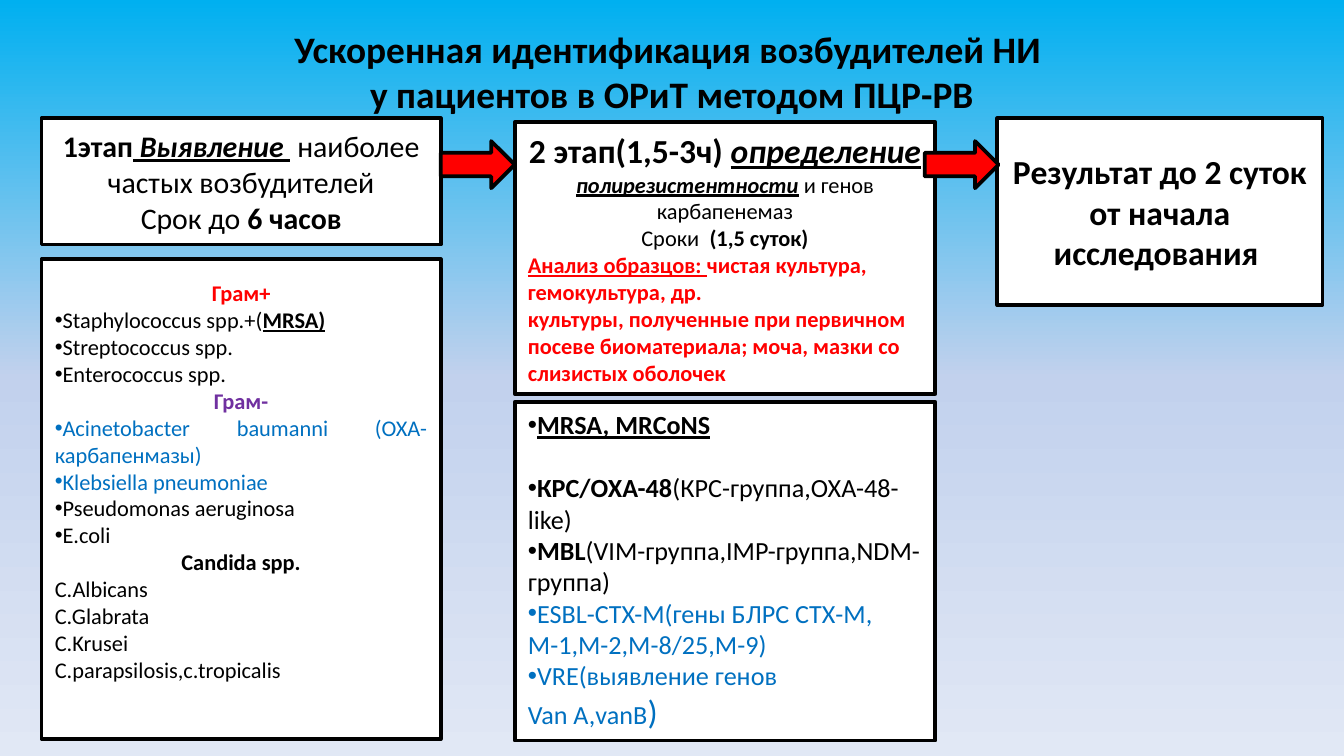
from copy import deepcopy

from lxml import etree
from pptx import Presentation
from pptx.dml.color import RGBColor
from pptx.enum.shapes import MSO_SHAPE
from pptx.enum.text import MSO_ANCHOR, PP_ALIGN
from pptx.oxml.ns import qn
from pptx.util import Inches, Pt

BLACK = RGBColor(0x00, 0x00, 0x00)
WHITE = RGBColor(0xFF, 0xFF, 0xFF)
RED = RGBColor(0xFF, 0x00, 0x00)
PURPLE = RGBColor(0x70, 0x30, 0xA0)
BLUE = RGBColor(0x00, 0x70, 0xC0)
SKY = [(0, RGBColor(0x00, 0xB0, 0xF0)), (0.5, RGBColor(0xC2, 0xD1, 0xED)),
       (1, RGBColor(0xE1, 0xE8, 0xF5))]
RECTANGLE, RIGHT_ARROW = MSO_SHAPE.RECTANGLE, MSO_SHAPE.RIGHT_ARROW
TOP, MIDDLE = MSO_ANCHOR.TOP, MSO_ANCHOR.MIDDLE
LEFT, CENTER, JUSTIFY = PP_ALIGN.LEFT, PP_ALIGN.CENTER, PP_ALIGN.JUSTIFY


def add_block(shape_type, left, top, width, height, fill):
    block = slide.shapes.add_shape(shape_type, Inches(left), Inches(top),
                                   Inches(width), Inches(height))
    block.shadow.inherit = False
    block.fill.solid()
    block.fill.fore_color.rgb = fill
    block.line.color.rgb = BLACK
    block.line.width = Pt(2)
    return block


def write(shape, anchor, paragraphs):
    """Each paragraph is (alignment, bulleted, runs); a run is (text, size, style, colour)."""
    frame = shape.text_frame
    frame.word_wrap = True
    frame.vertical_anchor = anchor
    for number, (alignment, bulleted, runs) in enumerate(paragraphs):
        paragraph = frame.add_paragraph() if number else frame.paragraphs[0]
        paragraph.alignment = alignment
        if bulleted:
            properties = paragraph._p.get_or_add_pPr()
            properties.set("marL", "0")
            properties.set("indent", "0")
            etree.SubElement(properties, qn("a:buFont")).set("typeface", "Arial")
            etree.SubElement(properties, qn("a:buChar")).set("char", "•")
        for text, size, style, colour in runs:
            if text == "\n":
                paragraph.add_line_break()
                continue
            run = paragraph.add_run()
            run.text = text
            font = run.font
            font.name, font.size, font.color.rgb = "Calibri", Pt(size), colour
            font.bold, font.italic, font.underline = (mark in style for mark in "biu")


# Widescreen 16:9 slide
prs = Presentation()
prs.slide_width = Inches(10)
prs.slide_height = Inches(10 * 9 / 16)
slide = prs.slides.add_slide(prs.slide_layouts[6])

# Background: three-stop gradient from top to bottom
sky = slide.background.fill
sky.gradient()
sky.gradient_angle = 270
stop_list = slide.element.find(".//" + qn("a:gsLst"))
stop_list.append(deepcopy(stop_list[-1]))
for stop, (position, colour) in zip(sky.gradient_stops, SKY):
    stop.position = position
    stop.color.rgb = colour

# Title
title = slide.shapes.add_textbox(Inches(0.5), Inches(0.23), Inches(9), Inches(0.6))
write(title, MIDDLE, [(CENTER, False, [
    ("Ускоренная идентификация возбудителей НИ ", 20, "b", BLACK),
    ("\n", 20, "b", BLACK),
    ("у пациентов в ОРиТ методом ПЦР-РВ", 20, "b", BLACK)])])

# Stage 1: list of pathogens
pathogens = add_block(RECTANGLE, 0.31, 1.93, 2.97, 3.57, WHITE)
pathogens.text_frame.margin_top = Inches(0.15)
write(pathogens, TOP, [
    (CENTER, False, [("Грам+", 12, "b", RED)]),
    (JUSTIFY, True, [("Staphylococcus spp.+(", 12, "", BLACK), ("MRSA)", 12, "bu", BLACK)]),
    (JUSTIFY, True, [("Streptococcus spp.", 12, "", BLACK)]),
    (JUSTIFY, True, [("Enterococcus spp.", 12, "", BLACK)]),
    (CENTER, False, [("Грам-", 12, "b", PURPLE)]),
    (JUSTIFY, True, [("Acinetobacter baumanni (OXA-карбапенмазы)", 12, "", BLUE)]),
    (JUSTIFY, True, [("Klebsiella pneumoniae", 12, "", BLUE)]),
    (JUSTIFY, True, [("Pseudomonas aeruginosa", 12, "", BLACK)]),
    (JUSTIFY, True, [("E.coli", 12, "", BLACK)]),
    (CENTER, False, [("Candida spp.", 12, "b", BLACK)]),
    *[(JUSTIFY, False, [(species, 12, "", BLACK)]) for species in
      ("C.Albicans", "C.Glabrata", "C.Krusei", "C.parapsilosis,c.tropicalis")],
])

# Stage 1: heading
stage_1 = add_block(RECTANGLE, 0.31, 0.88, 2.97, 0.94, WHITE)
write(stage_1, MIDDLE, [
    (CENTER, False, [("1этап", 16, "b", BLACK), (" Выявление ", 16, "biu", BLACK),
                     (" наиболее частых возбудителей", 16, "", BLACK)]),
    (CENTER, False, [("Срок до ", 16, "", BLACK), ("6 часов", 16, "b", BLACK)]),
])

# Stage 2: heading and samples
stage_2 = add_block(RECTANGLE, 3.83, 0.91, 3.13, 2.02, WHITE)
write(stage_2, MIDDLE, [
    (CENTER, False, [("2 этап(1,5-3ч) ", 18, "b", BLACK), ("определение ", 18, "biu", BLACK),
                     ("полирезистентности", 12, "biu", BLACK), (" ", 12, "b", BLACK),
                     ("и генов карбапенемаз", 12, "", BLACK)]),
    (CENTER, False, [("Сроки  ", 12, "", BLACK), ("(1,5 суток)", 12, "b", BLACK)]),
    (LEFT, False, [("Анализ образцов: ", 12, "bu", RED),
                   ("чистая культура, гемокультура, др.", 12, "b", RED)]),
    (LEFT, False, [("культуры, полученные при первичном посеве биоматериала; "
                    "моча, мазки со слизистых оболочек", 12, "b", RED)]),
])

# Stage 2: resistance markers
markers = add_block(RECTANGLE, 3.83, 2.99, 3.13, 2.52, WHITE)
write(markers, TOP, [
    (LEFT, True, [("MRSA, MRCoNS", 14, "bu", BLACK)]),
    (LEFT, True, [("КРС/ОХА-48", 14, "b", BLACK),
                  ("(КРС-группа,ОХА-48-like)", 14, "", BLACK)]),
    (LEFT, True, [("MBL", 14, "b", BLACK),
                  ("(VIM-группа,IMP-группа,NDM-группа)", 14, "", BLACK)]),
    (LEFT, True, [("ESBL-CTX-M(гены БЛРС СТХ-М, М-1,М-2,М-8/25,М-9)", 14, "", BLUE)]),
    (LEFT, True, [("VRE(выявление генов", 14, "", BLUE)]),
    (LEFT, False, [("Van A,vanB", 14, "", BLUE), (")", 18, "", BLUE)]),
])
markers.text_frame.paragraphs[0].space_after = Pt(17)

# Result
result = add_block(RECTANGLE, 7.42, 0.88, 2.42, 1.39, WHITE)
write(result, MIDDLE, [(CENTER, False, [
    ("Результат до 2 суток от начала исследования ", 18, "b", BLACK)])])

# Arrows between the stages
for arrow_left in (3.28, 6.88):
    add_block(RIGHT_ARROW, arrow_left, 1.05, 0.55, 0.35, RED)

prs.save("out.pptx")
